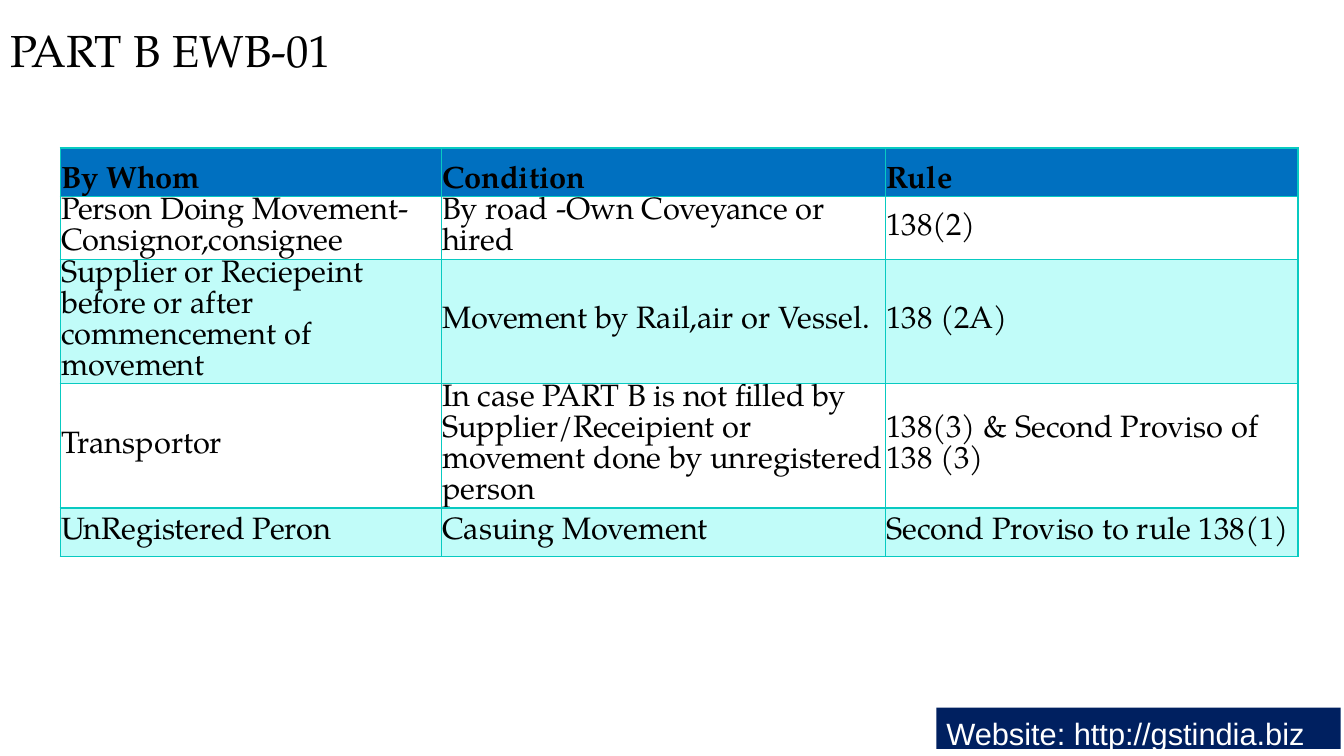
from dataclasses import dataclass

from lxml import etree
from pptx import Presentation
from pptx.dml.color import RGBColor
from pptx.enum.shapes import MSO_SHAPE
from pptx.enum.text import MSO_ANCHOR, MSO_AUTO_SIZE, PP_ALIGN
from pptx.oxml.ns import qn
from pptx.util import Cm, Pt

RECTANGLE = MSO_SHAPE.RECTANGLE
TOP, MIDDLE, BOTTOM = MSO_ANCHOR.TOP, MSO_ANCHOR.MIDDLE, MSO_ANCHOR.BOTTOM
NO_AUTOFIT = MSO_AUTO_SIZE.NONE
LEFT = PP_ALIGN.LEFT

SERIF = "TeX Gyre Pagella"
BLACK, WHITE, NAVY = "000000", "FFFFFF", "002060"
HEADER_BLUE, BAND_AQUA, BORDER_TEAL = "0070C0", "C1FCF9", "08CAC1"

COLUMN_WIDTHS = (9.6, 11.2, 10.39)
ROW_HEIGHT = 1.22
TABLE_LEFT, TABLE_TOP = 1.52, 3.73


@dataclass(frozen=True)
class TextStyle:
    size: float
    font: str = SERIF
    color: str = BLACK
    bold: bool = False
    line_spacing: float | None = None


@dataclass(frozen=True)
class Entry:
    by_whom: str
    condition: str
    rule: str


TITLE_STYLE = TextStyle(32, line_spacing=0.9)
HEADER_STYLE = TextStyle(22, bold=True)
BODY_STYLE = TextStyle(22)
WEBSITE_STYLE = TextStyle(22, "Arial", WHITE, line_spacing=1.07)

ENTRIES = (
    Entry("By Whom", "Condition", "Rule"),
    Entry("Person Doing Movement-Consignor,consignee",
          "By road -Own Coveyance or hired", "138(2)"),
    Entry("Supplier or Reciepeint before or after commencement of movement",
          "Movement by Rail,air or Vessel.", "138 (2A)"),
    Entry("Transportor",
          "In case PART B is not filled by Supplier/Receipient or "
          "movement done by unregistered person",
          "138(3) & Second Proviso of 138 (3)"),
    Entry("UnRegistered Peron", "Casuing Movement", "Second Proviso to rule 138(1)"),
)


def rgb(color: str) -> RGBColor:
    return RGBColor.from_string(color)


def write_text(text_frame, text: str, style: TextStyle) -> None:
    text_frame.word_wrap = True
    paragraph = text_frame.paragraphs[0]
    paragraph.alignment = LEFT
    if style.line_spacing:
        paragraph.line_spacing = style.line_spacing
    run = paragraph.add_run()
    run.text = text
    run.font.name = style.font
    run.font.size = Pt(style.size)
    run.font.bold = style.bold
    run.font.color.rgb = rgb(style.color)


def add_borders(cell) -> None:
    """Draw a one-point line on all sides; call before filling the cell."""
    properties = cell._tc.get_or_add_tcPr()
    for side in ("a:lnL", "a:lnR", "a:lnT", "a:lnB"):
        line = etree.SubElement(properties, qn(side), w=str(Pt(1)))
        fill = etree.SubElement(line, qn("a:solidFill"))
        etree.SubElement(fill, qn("a:srgbClr"), val=BORDER_TEAL)


def format_cell(cell, text: str, row_index: int) -> None:
    is_header = row_index == 0
    cell.margin_left = cell.margin_right = cell.margin_top = Cm(0.02)
    cell.margin_bottom = 0
    cell.vertical_anchor = BOTTOM if is_header else MIDDLE
    write_text(cell.text_frame, text, HEADER_STYLE if is_header else BODY_STYLE)
    add_borders(cell)
    if is_header or row_index % 2 == 0:
        cell.fill.solid()
        cell.fill.fore_color.rgb = rgb(HEADER_BLUE if is_header else BAND_AQUA)
    else:
        cell.fill.background()


def add_title(slide) -> None:
    title = slide.shapes.title
    title.left, title.top, title.width, title.height = (
        Cm(0), Cm(-0.08), Cm(31.01), Cm(2.16))
    title.text_frame.auto_size = NO_AUTOFIT
    title.text_frame.vertical_anchor = BOTTOM
    write_text(title.text_frame, "PART B EWB-01", TITLE_STYLE)


def add_website_box(slide) -> None:
    box = slide.shapes.add_shape(RECTANGLE, Cm(23.6), Cm(17.83), Cm(10.19), Cm(1.04))
    box.shadow.inherit = False
    box.fill.solid()
    box.fill.fore_color.rgb = rgb(NAVY)
    box.line.fill.background()
    box.text_frame.vertical_anchor = TOP
    write_text(box.text_frame, "Website: http://gstindia.biz", WEBSITE_STYLE)


def add_rules_table(slide) -> None:
    table = slide.shapes.add_table(
        len(ENTRIES), len(COLUMN_WIDTHS), Cm(TABLE_LEFT), Cm(TABLE_TOP),
        Cm(sum(COLUMN_WIDTHS)), Cm(ROW_HEIGHT * len(ENTRIES))).table
    table.horz_banding = False
    for column, width in zip(table.columns, COLUMN_WIDTHS):
        column.width = Cm(width)
    for row_index, entry in enumerate(ENTRIES):
        row = table.rows[row_index]
        row.height = Cm(ROW_HEIGHT)
        for cell, text in zip(row.cells, (entry.by_whom, entry.condition, entry.rule)):
            format_cell(cell, text, row_index)


def main() -> None:
    presentation = Presentation()
    presentation.slide_width, presentation.slide_height = Cm(33.87), Cm(19.05)
    slide = presentation.slides.add_slide(presentation.slide_layouts[5])
    add_title(slide)
    add_website_box(slide)
    add_rules_table(slide)
    presentation.save("out.pptx")


if __name__ == "__main__":
    main()
